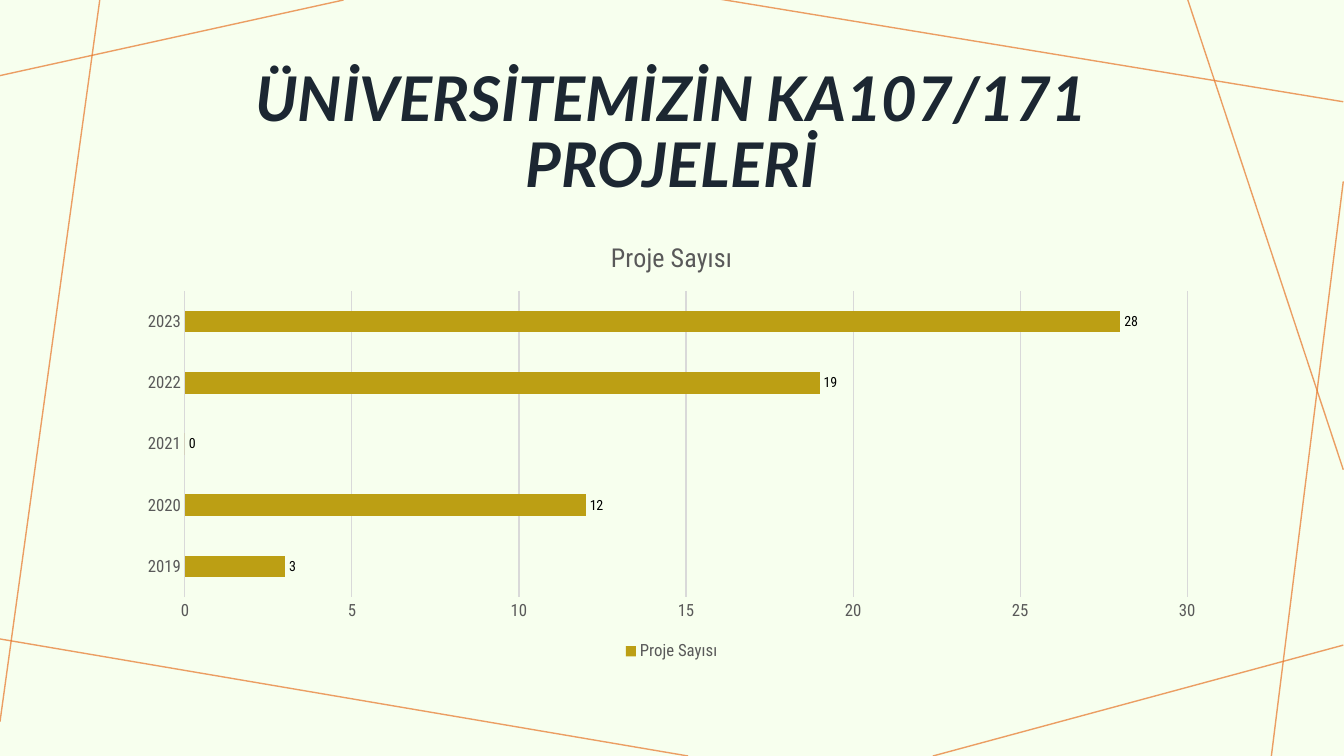
from lxml import etree
from pptx import Presentation
from pptx.chart.data import CategoryChartData
from pptx.dml.color import RGBColor
from pptx.enum.chart import XL_CHART_TYPE, XL_LABEL_POSITION, XL_LEGEND_POSITION, XL_TICK_MARK
from pptx.enum.shapes import MSO_CONNECTOR
from pptx.enum.text import MSO_ANCHOR, PP_ALIGN
from pptx.oxml.ns import qn
from pptx.util import Pt

BAR = XL_CHART_TYPE.BAR_CLUSTERED
OUTSIDE_END = XL_LABEL_POSITION.OUTSIDE_END
LEGEND_BOTTOM = XL_LEGEND_POSITION.BOTTOM
NO_TICK = XL_TICK_MARK.NONE
STRAIGHT = MSO_CONNECTOR.STRAIGHT
MIDDLE = MSO_ANCHOR.MIDDLE
CENTER = PP_ALIGN.CENTER

COLORS = {
    "background": "F7FFEE",
    "border": "E77629",
    "heading": "1C2732",
    "label": "595959",
    "grid": "D9D9D9",
    "bar": "BC9F14",
    "value": "000000",
}
CHART_FONT = "Roboto Condensed"
SERIES_NAME = "Proje Sayısı"
PROJECTS = {"2019": 3, "2020": 12, "2021": 0, "2022": 19, "2023": 28}
BORDER_LINES = [
    (245.5, 0, 0, 54),
    (71.3, 0, 0, 515.5),
    (491.8, 540, -3.6, 455.8),
    (960, 460.8, 666.7, 540),
    (960, 129.6, 908.6, 540),
    (960, 335.5, 848.9, 0),
    (960, 72.7, 514.1, -0.7),
]


def color(name):
    return RGBColor.from_string(COLORS[name])


def style_font(font, name, size, color_name):
    font.name = name
    font.size = Pt(size)
    font.color.rgb = color(color_name)


deck = Presentation()
deck.slide_width = Pt(960.48)
deck.slide_height = Pt(540)
page = deck.slides.add_slide(deck.slide_layouts[6])
page.background.fill.solid()
page.background.fill.fore_color.rgb = color("background")

for ends in BORDER_LINES:
    border = page.shapes.add_connector(STRAIGHT, *[Pt(value) for value in ends])
    border.line.width = Pt(1)
    border.line.color.rgb = color("border")
    properties = border.element.spPr
    tint = properties.find(".//" + qn("a:srgbClr"))
    etree.SubElement(tint, qn("a:alpha"), val="70000")
    etree.SubElement(properties, qn("a:effectLst"))

box = page.shapes.add_textbox(Pt(90), Pt(41.8), Pt(780), Pt(108.7))
frame = box.text_frame
frame.word_wrap = True
frame.vertical_anchor = MIDDLE
frame.text = "ÜNİVERSİTEMİZİN KA107/171 PROJELERİ"
para = frame.paragraphs[0]
para.alignment = CENTER
para.line_spacing = 0.9
span = para.runs[0]
style_font(span.font, "Lato", 44, "heading")
span.font.bold = True
span.font.italic = True

data = CategoryChartData()
data.categories = list(PROJECTS)
data.add_series(SERIES_NAME, list(PROJECTS.values()))
chart = page.shapes.add_chart(BAR, Pt(90), Pt(158.4), Pt(780), Pt(316.8), data).chart
style_font(chart.font, "Arial", 10, "value")

chart.has_title = True
chart.chart_title.include_in_layout = False
title_frame = chart.chart_title.text_frame
title_frame.text = SERIES_NAME
title_font = title_frame.paragraphs[0].runs[0].font
style_font(title_font, CHART_FONT, 18.6, "label")
title_font.bold = False

chart.has_legend = True
chart.legend.position = LEGEND_BOTTOM
chart.legend.include_in_layout = False
style_font(chart.legend.font, CHART_FONT, 12, "label")

years = chart.category_axis
counts = chart.value_axis
for axis in (years, counts):
    axis.major_tick_mark = NO_TICK
    axis.minor_tick_mark = NO_TICK
    style_font(axis.tick_labels.font, CHART_FONT, 12, "label")
counts.format.line.fill.background()
counts.minimum_scale = 0
counts.maximum_scale = 30
counts.major_unit = 5
for line in (years.format.line, counts.major_gridlines.format.line):
    line.width = Pt(0.75)
    line.color.rgb = color("grid")

plot = chart.plots[0]
plot.gap_width = 182
plot.vary_by_categories = False
bars = plot.series[0]
bars.format.fill.solid()
bars.format.fill.fore_color.rgb = color("bar")
labels = bars.data_labels
labels.show_value = True
labels.position = OUTSIDE_END
style_font(labels.font, CHART_FONT, 10, "value")

deck.save("out.pptx")
